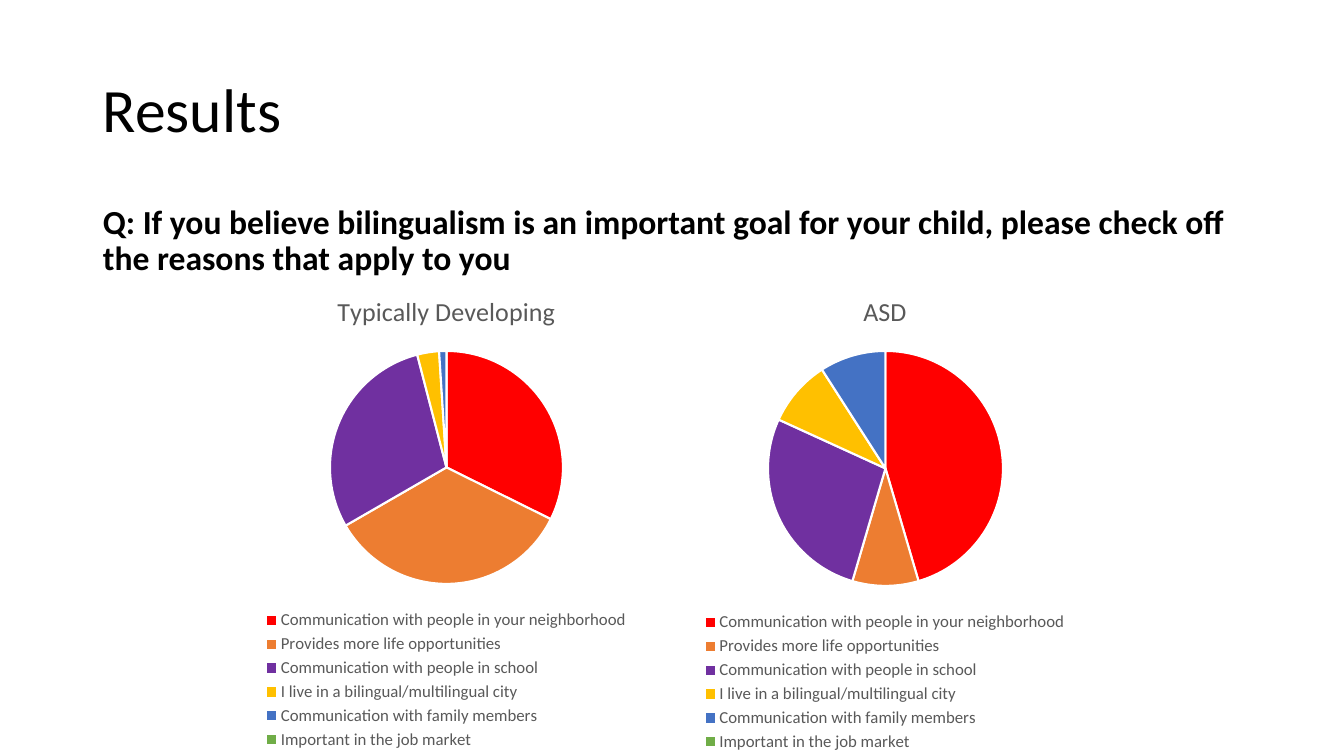
from lxml import etree
from pptx import Presentation
from pptx.chart.data import CategoryChartData
from pptx.dml.color import RGBColor
from pptx.enum.chart import XL_CHART_TYPE, XL_LEGEND_POSITION
from pptx.enum.text import MSO_ANCHOR
from pptx.oxml.ns import qn
from pptx.util import Emu, Pt

PIE = XL_CHART_TYPE.PIE
BOTTOM = XL_LEGEND_POSITION.BOTTOM
TOP, MIDDLE = MSO_ANCHOR.TOP, MSO_ANCHOR.MIDDLE

EMU_PER_INCH, PX_PER_INCH = 914400, 100.8
FONT = "Calibri"
BLACK = RGBColor(0x00, 0x00, 0x00)
WHITE = RGBColor(0xFF, 0xFF, 0xFF)
GRAY = RGBColor(0x59, 0x59, 0x59)
RED = RGBColor(0xFF, 0x00, 0x00)
ORANGE = RGBColor(0xED, 0x7D, 0x31)
PURPLE = RGBColor(0x70, 0x30, 0xA0)
GOLD = RGBColor(0xFF, 0xC0, 0x00)
BLUE = RGBColor(0x44, 0x72, 0xC4)
GREEN = RGBColor(0x70, 0xAD, 0x47)

REASONS = {
    "Communication with people in your neighborhood": RED,
    "Provides more life opportunities": ORANGE,
    "Communication with people in school": PURPLE,
    "I live in a bilingual/multilingual city": GOLD,
    "Communication with family members": BLUE,
    "Important in the job market": GREEN,
}
QUESTION = ("Q: If you believe bilingualism is an important goal for your child, "
            "please check off the reasons that apply to you")


def px(n):
    """Turn a length in px into EMU."""
    return Emu(round(n * EMU_PER_INCH / PX_PER_INCH))


def set_font(font, size, color, bold=False):
    """Format one font object."""
    font.name, font.size, font.bold = FONT, Pt(size), bold
    font.color.rgb = color


def add_text(s, text, box, size, color=BLACK, bold=False, anchor=TOP):
    """Add a wrapped text box with one paragraph."""
    tf = s.shapes.add_textbox(*map(px, box)).text_frame
    tf.word_wrap = True
    tf.vertical_anchor = anchor
    p = tf.paragraphs[0]
    p.line_spacing = 0.9
    r = p.add_run()
    r.text = text
    set_font(r.font, size, color, bold)


def place_plot(chart, box, plot_box):
    """Fix the inner plot area of a chart at a place on the slide."""
    left, top, width, height = box
    x, y, w, h = plot_box
    plot_area = chart._chartSpace.chart.plotArea
    for old in plot_area.findall(qn("c:layout")):
        plot_area.remove(old)
    layout = etree.Element(qn("c:layout"))
    manual = etree.SubElement(layout, qn("c:manualLayout"))
    values = {
        "layoutTarget": "inner", "xMode": "edge", "yMode": "edge",
        "x": (x - left) / width, "y": (y - top) / height,
        "w": w / width, "h": h / height,
    }
    for tag, value in values.items():
        etree.SubElement(manual, qn("c:" + tag)).set("val", str(value))
    plot_area.insert(0, layout)


def add_pie(s, title, values, box, plot_box):
    """Add a titled pie of the reasons with a legend below it."""
    data = CategoryChartData()
    data.categories = list(REASONS)
    data.add_series(title, values)
    chart = s.shapes.add_chart(PIE, *map(px, box), data).chart
    set_font(chart.font, 10, BLACK)
    chart.has_title = True
    p = chart.chart_title.text_frame.paragraphs[0]
    r = p.add_run()
    r.text = title
    set_font(r.font, 18.6, GRAY)
    chart.has_legend = True
    chart.legend.position = BOTTOM
    chart.legend.include_in_layout = False
    set_font(chart.legend.font, 12, GRAY)
    plot = chart.plots[0]
    plot.vary_by_categories = True
    for i, color in enumerate(REASONS.values()):
        fmt = plot.series[0].points[i].format
        fmt.fill.solid()
        fmt.fill.fore_color.rgb = color
        fmt.line.color.rgb = WHITE
        fmt.line.width = Pt(1.5)
    place_plot(chart, box, plot_box)


def main():
    """Build the results slide."""
    prs = Presentation()
    prs.slide_width, prs.slide_height = px(1344), px(756)
    s = prs.slides.add_slide(prs.slide_layouts[6])
    add_text(s, "Results", (93, 40, 1159, 146), 44, anchor=MIDDLE)
    add_text(s, QUESTION, (93, 200, 1159, 480), 24, bold=True)
    add_pie(s, "Typically Developing", (32, 34, 29, 3, 1, 0),
            (207, 274, 479, 480), (330, 351, 233, 233))
    add_pie(s, "ASD", (45, 9, 27, 9, 9, 0),
            (633, 274, 504, 482), (768, 351, 235, 235))
    prs.save("out.pptx")


if __name__ == "__main__":
    main()
